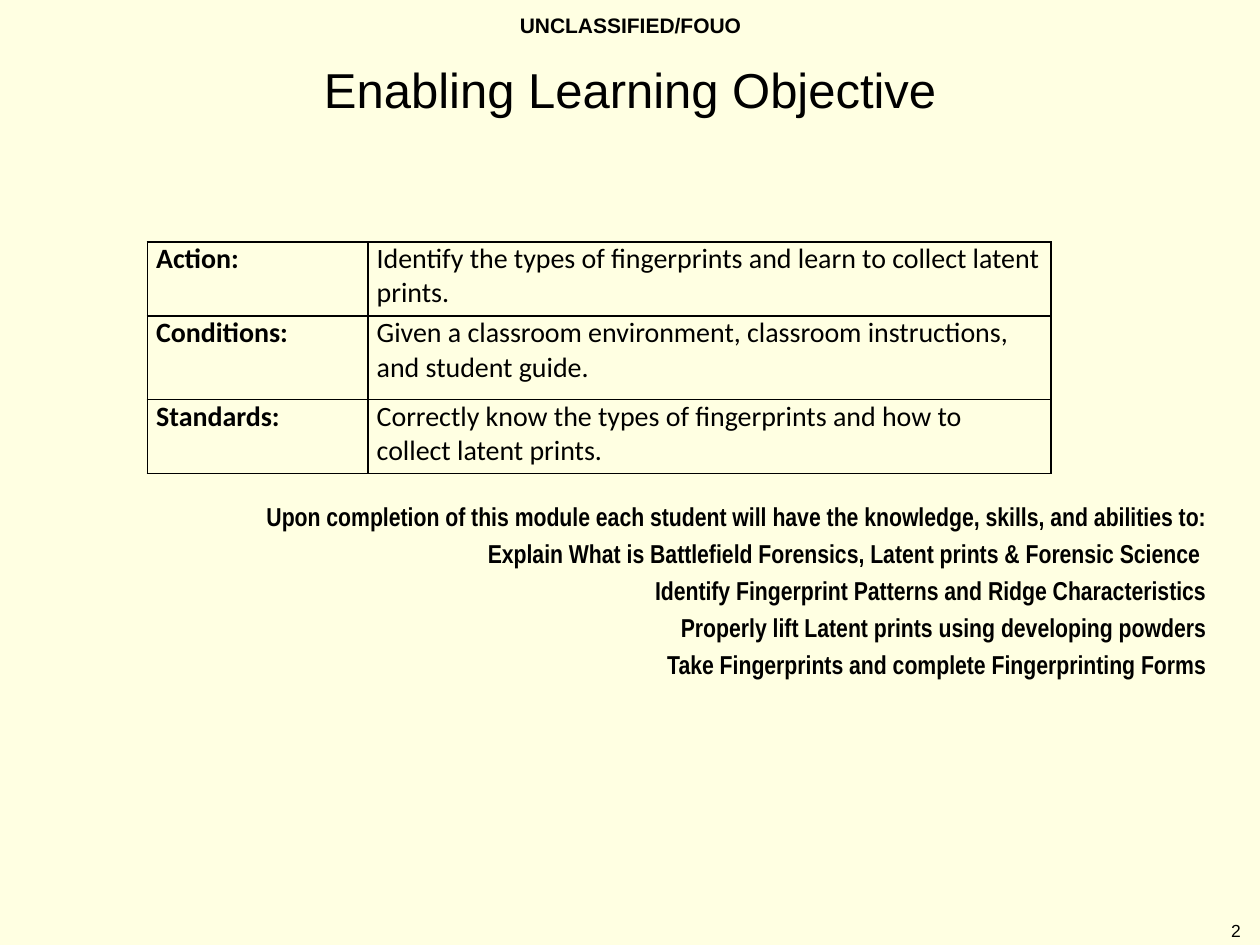
from typing import NamedTuple

from pptx import Presentation
from pptx.dml.color import RGBColor
from pptx.enum.text import MSO_ANCHOR as Anchor, MSO_AUTO_SIZE as AutoSize, PP_ALIGN as Align
from pptx.oxml import parse_xml
from pptx.oxml.ns import nsdecls
from pptx.util import Inches, Pt

INK = "000000"
PAPER = "FFFFE2"


class Area(NamedTuple):
    left: float
    top: float
    width: float
    height: float


class Style(NamedTuple):
    font: str
    size: float
    bold: bool = False
    align: Align = Align.LEFT
    anchor: Anchor = Anchor.TOP
    gap: float = 0


class Label(NamedTuple):
    text: str
    area: Area
    style: Style


class Objective(NamedTuple):
    heading: str
    detail: str
    height: float


TITLE = Label("Enabling Learning Objective", Area(0, 0.42, 10, 0.92),
              Style("Arial", 28, align=Align.CENTER, anchor=Anchor.TOP))
MARKING = Label("UNCLASSIFIED/FOUO", Area(3.42, 0, 3.17, 0.4),
                Style("Arial", 12, True, Align.CENTER, Anchor.MIDDLE))
PAGE_NUMBER = Label("2", Area(9.6, 7.25, 0.42, 0.27),
                    Style("Arial", 10, align=Align.CENTER, anchor=Anchor.MIDDLE))
SKILLS = Label("\n".join([
    "Upon completion of this module each student will have the knowledge, skills, and abilities to:",
    "Explain What is Battlefield Forensics, Latent prints & Forensic Science ",
    "Identify Fingerprint Patterns and Ridge Characteristics",
    "Properly lift Latent prints using developing powders",
    "Take Fingerprints and complete Fingerprinting Forms",
]), Area(0.67, 3.92, 9, 1.5), Style("Arial Narrow", 14.8, True, Align.RIGHT, gap=3.5))

TABLE_AREA = Area(1.17, 1.92, 7.17, 1.84)
COLUMN_WIDTHS = [1.75, 5.42]
HEADING_STYLE = Style("Calibri", 16, True)
DETAIL_STYLE = Style("Calibri", 16)
OBJECTIVES = [
    Objective("Action:",
              "Identify the types of fingerprints and learn to collect latent prints.", 0.59),
    Objective("Conditions:",
              "Given a classroom environment, classroom instructions, and student guide.", 0.66),
    Objective("Standards:",
              "Correctly know the types of fingerprints and how to collect latent prints.", 0.59),
]


def color(value: str) -> RGBColor:
    return RGBColor.from_string(value)


def apply(target, values: dict) -> None:
    for name, value in values.items():
        setattr(target, name, value)


def write(frame, text: str, style: Style) -> None:
    for index, line in enumerate(text.split("\n")):
        para = frame.paragraphs[0] if index == 0 else frame.add_paragraph()
        apply(para, {"alignment": style.align, "space_before": Pt(style.gap if index else 0)})
        span = para.add_run()
        span.text = line
        apply(span.font, {"name": style.font, "size": Pt(style.size), "bold": style.bold})
        span.font.color.rgb = color(INK)


def fill_box(box, label: Label) -> None:
    apply(box, {name: Inches(value) for name, value in label.area._asdict().items()})
    apply(box.text_frame, {"word_wrap": True, "auto_size": AutoSize.NONE,
                           "vertical_anchor": label.style.anchor})
    write(box.text_frame, label.text, label.style)


def remove_bullets(frame) -> None:
    for para in frame.paragraphs:
        props = para._p.get_or_add_pPr()
        props.set("marL", "0")
        props.set("indent", "0")
        props.append(parse_xml(f"<a:buNone {nsdecls('a')}/>"))


def add_borders(cell) -> None:
    props = cell._tc.get_or_add_tcPr()
    for index, side in enumerate(("lnL", "lnR", "lnT", "lnB")):
        props.insert(index, parse_xml(
            f'<a:{side} {nsdecls("a")} w="{Pt(1)}"><a:solidFill>'
            f'<a:srgbClr val="{INK}"/></a:solidFill></a:{side}>'))


def add_objectives(page) -> None:
    area = map(Inches, TABLE_AREA)
    table = page.shapes.add_table(len(OBJECTIVES), len(COLUMN_WIDTHS), *area).table
    apply(table, {"first_row": False, "horz_banding": False})
    for column, width in zip(table.columns, COLUMN_WIDTHS):
        column.width = Inches(width)
    for row, objective in zip(table.rows, OBJECTIVES):
        row.height = Inches(objective.height)
        contents = [(objective.heading, HEADING_STYLE), (objective.detail, DETAIL_STYLE)]
        for cell, (text, style) in zip(row.cells, contents):
            apply(cell, {"margin_left": Inches(0.07), "margin_right": Inches(0.07),
                         "margin_top": 0, "margin_bottom": 0})
            cell.fill.background()
            add_borders(cell)
            write(cell.text_frame, text, style)


def main() -> None:
    deck = Presentation()
    apply(deck, {"slide_width": Inches(10), "slide_height": Inches(7.5)})
    page = deck.slides.add_slide(deck.slide_layouts[1])
    page.background.fill.solid()
    page.background.fill.fore_color.rgb = color(PAPER)

    body = page.placeholders[1]
    fill_box(body, SKILLS)
    remove_bullets(body.text_frame)
    fill_box(page.shapes.title, TITLE)
    add_objectives(page)
    for label in (MARKING, PAGE_NUMBER):
        fill_box(page.shapes.add_textbox(*map(Inches, label.area)), label)

    deck.save("out.pptx")


if __name__ == "__main__":
    main()
